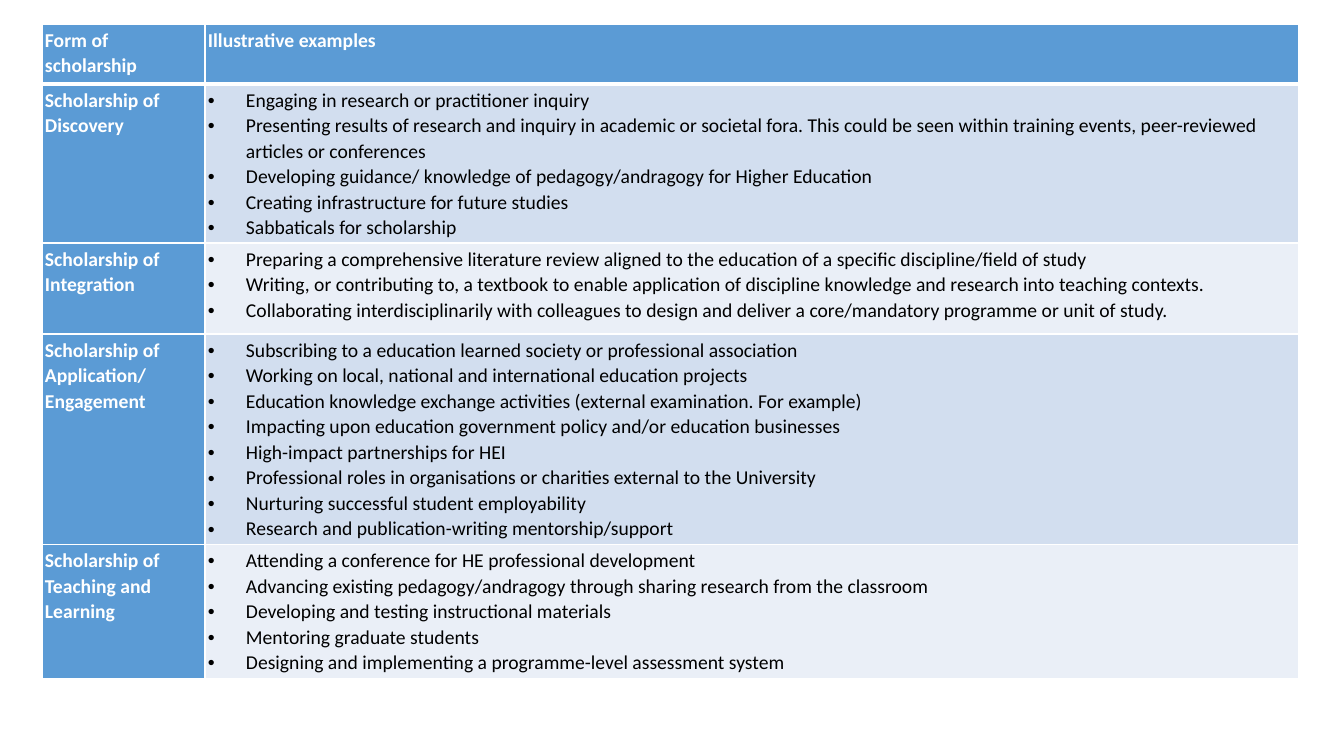
from lxml.etree import SubElement
from pptx import Presentation
from pptx.dml.color import RGBColor
from pptx.oxml.ns import qn
from pptx.util import Pt

PX = 914400 / 100.8
WHITE = RGBColor(0xFF, 0xFF, 0xFF)
BLACK = RGBColor(0x00, 0x00, 0x00)
BLUE = RGBColor(0x5B, 0x9B, 0xD5)
BAND_DARK = RGBColor(0xD2, 0xDE, 0xEF)
BAND_LIGHT = RGBColor(0xEA, 0xEF, 0xF7)

ROWS = [
    (60, "Form of scholarship", ["Illustrative examples"]),
    (158, "Scholarship of Discovery", [
        "Engaging in research or practitioner inquiry",
        "Presenting results of research and inquiry in academic or societal fora. "
        "This could be seen within training events, peer-reviewed articles or conferences",
        "Developing guidance/ knowledge of pedagogy/andragogy for Higher Education",
        "Creating infrastructure for future studies",
        "Sabbaticals for scholarship",
    ]),
    (91, "Scholarship of Integration", [
        "Preparing a comprehensive literature review aligned to the education "
        "of a specific discipline/field of study",
        "Writing, or contributing to, a textbook to enable application of "
        "discipline knowledge and research into teaching contexts.",
        "Collaborating interdisciplinarily with colleagues to design and deliver "
        "a core/mandatory programme or unit of study.",
    ]),
    (210, "Scholarship of Application/ Engagement", [
        "Subscribing to a education learned society or professional association",
        "Working on local, national and international education projects",
        "Education knowledge exchange activities (external examination. For example)",
        "Impacting upon education government policy and/or education businesses",
        "High-impact partnerships for HEI",
        "Professional roles in organisations or charities external to the University",
        "Nurturing successful student employability",
        "Research and publication-writing mentorship/support",
    ]),
    (134, "Scholarship of Teaching and Learning", [
        "Attending a conference for HE professional development",
        "Advancing existing pedagogy/andragogy through sharing research from the classroom",
        "Developing and testing instructional materials",
        "Mentoring graduate students",
        "Designing and implementing a programme-level assessment system",
    ]),
]
COLUMNS = [163, 1094]


def px(n):
    return round(n * PX)


def add_border(cell, side, points):
    ln = SubElement(cell._tc.get_or_add_tcPr(), qn(f"a:ln{side}"), w=str(Pt(points)))
    SubElement(SubElement(ln, qn("a:solidFill")), qn("a:srgbClr"), val=str(WHITE))


prs = Presentation()
prs.slide_width, prs.slide_height = px(1344), px(756)
s = prs.slides.add_slide(prs.slide_layouts[6])
height = sum(row[0] for row in ROWS)
table = s.shapes.add_table(
    len(ROWS), len(COLUMNS), px(42), px(24), px(sum(COLUMNS)), px(height)).table
for column, width in zip(table.columns, COLUMNS):
    column.width = px(width)

for i, (row_height, form, examples) in enumerate(ROWS):
    table.rows[i].height = px(row_height)
    for j, lines in enumerate([[form], examples]):
        cell = table.cell(i, j)
        heading = i == 0 or j == 0
        for side in ("left", "right", "top", "bottom"):
            setattr(cell, f"margin_{side}", px(3))
        for side in "LRTB":
            under_header = (i, side) in [(0, "B"), (1, "T")]
            add_border(cell, side, 3 if under_header else 1)
        cell.fill.solid()
        band = BAND_DARK if i % 2 else BAND_LIGHT
        cell.fill.fore_color.rgb = BLUE if heading else band

        tf = cell.text_frame
        for k, line in enumerate(lines):
            p = tf.add_paragraph() if k else tf.paragraphs[0]
            p.line_spacing = 1.07
            if not heading:
                pPr = p._p.get_or_add_pPr()
                pPr.set("marL", str(px(38)))
                pPr.set("indent", str(-px(38)))
                SubElement(pPr, qn("a:buFont"), typeface="Arial")
                SubElement(pPr, qn("a:buChar"), char="•")
            r = p.add_run()
            r.text = line
            for name, value in {"name": "Calibri", "size": Pt(14), "bold": heading}.items():
                setattr(r.font, name, value)
            r.font.color.rgb = WHITE if heading else BLACK

prs.save("out.pptx")
